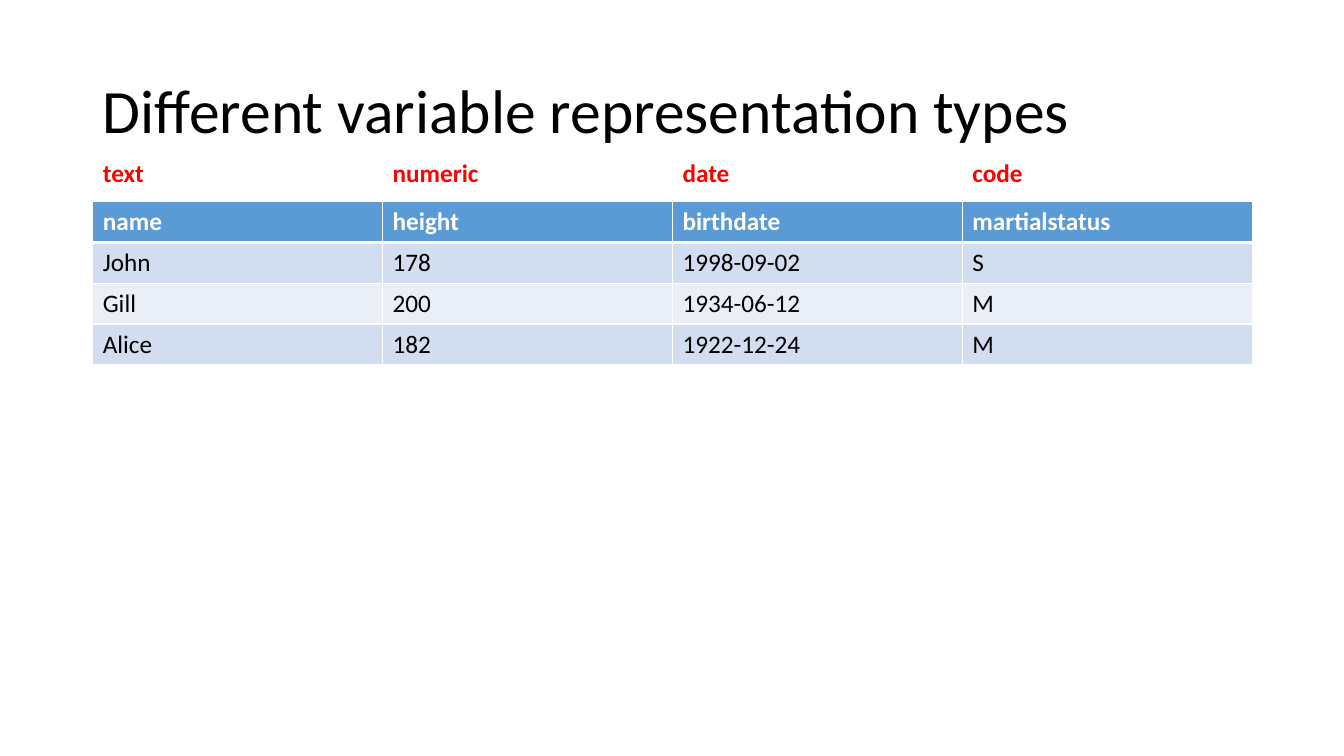
import pptx
import pptx.dml.color
import pptx.enum.text
import pptx.oxml
import pptx.oxml.ns
import pptx.util
from pptx.util import Inches

LEFT, WIDTH, ROW_HEIGHT = 0.92, 11.5, 0.405
BLACK, WHITE, RED = "000000", "FFFFFF", "FF0000"
BLUE, BAND_DARK, BAND_LIGHT = "5B9BD5", "D2DEEF", "EAEFF7"

TYPES = ["text", "numeric", "date", "code"]
HEADER = ["name", "height", "birthdate", "martialstatus"]
PEOPLE = [
    ["John", "178", "1998-09-02", "S"],
    ["Gill", "200", "1934-06-12", "M"],
    ["Alice", "182", "1922-12-24", "M"],
]


def rgb(value):
    return pptx.dml.color.RGBColor.from_string(value)


class SlideBuilder:
    font = "Calibri"
    body_size = 18
    title_size = 44

    def __init__(self, prs):
        self.s = prs.slides.add_slide(prs.slide_layouts[6])

    def style(self, p, size, color, bold=False):
        for r in p.runs:
            r.font.name = self.font
            r.font.size = pptx.util.Pt(size)
            r.font.bold = bold
            r.font.color.rgb = rgb(color)

    def title(self, text, top, height):
        sp = self.s.shapes.add_textbox(
            Inches(LEFT), Inches(top), Inches(WIDTH), Inches(height))
        tf = sp.text_frame
        tf.word_wrap = True
        tf.vertical_anchor = pptx.enum.text.MSO_ANCHOR.MIDDLE
        tf.text = text
        p = tf.paragraphs[0]
        p.line_spacing = 0.9
        self.style(p, self.title_size, BLACK)

    def borders(self, cell, top, bottom):
        tc_pr = cell._tc.get_or_add_tcPr()
        sides = [("L", 1), ("R", 1), ("T", top), ("B", bottom)]
        for i, (side, width) in enumerate(sides):
            tc_pr.insert(i, pptx.oxml.parse_xml(
                f'<a:ln{side} {pptx.oxml.ns.nsdecls("a")} w="{pptx.util.Pt(width)}">'
                f'<a:solidFill><a:srgbClr val="{WHITE}"/></a:solidFill></a:ln{side}>'))

    def table(self, rows, top, header_color, fills):
        tbl = self.s.shapes.add_table(
            len(rows), len(rows[0]), Inches(LEFT), Inches(top),
            Inches(WIDTH), Inches(ROW_HEIGHT * len(rows))).table
        for i, (row, fill) in enumerate(zip(rows, fills)):
            for j, text in enumerate(row):
                cell = tbl.cell(i, j)
                cell.text = text
                color = BLACK if i else header_color
                self.style(cell.text_frame.paragraphs[0], self.body_size, color, i == 0)
                if fill:
                    cell.fill.solid()
                    cell.fill.fore_color.rgb = rgb(fill)
                else:
                    cell.fill.background()
                self.borders(cell, 3 if i == 1 else 1, 3 if i == 0 else 1)


def main():
    prs = pptx.Presentation()
    prs.slide_width, prs.slide_height = Inches(13.33), Inches(7.5)
    slide = SlideBuilder(prs)
    slide.title("Different variable representation types", 0.4, 1.45)
    slide.table([HEADER] + PEOPLE, 2, WHITE, [BLUE, BAND_DARK, BAND_LIGHT, BAND_DARK])
    slide.table([TYPES], 1.52, RED, [None])
    prs.save("out.pptx")


if __name__ == "__main__":
    main()
